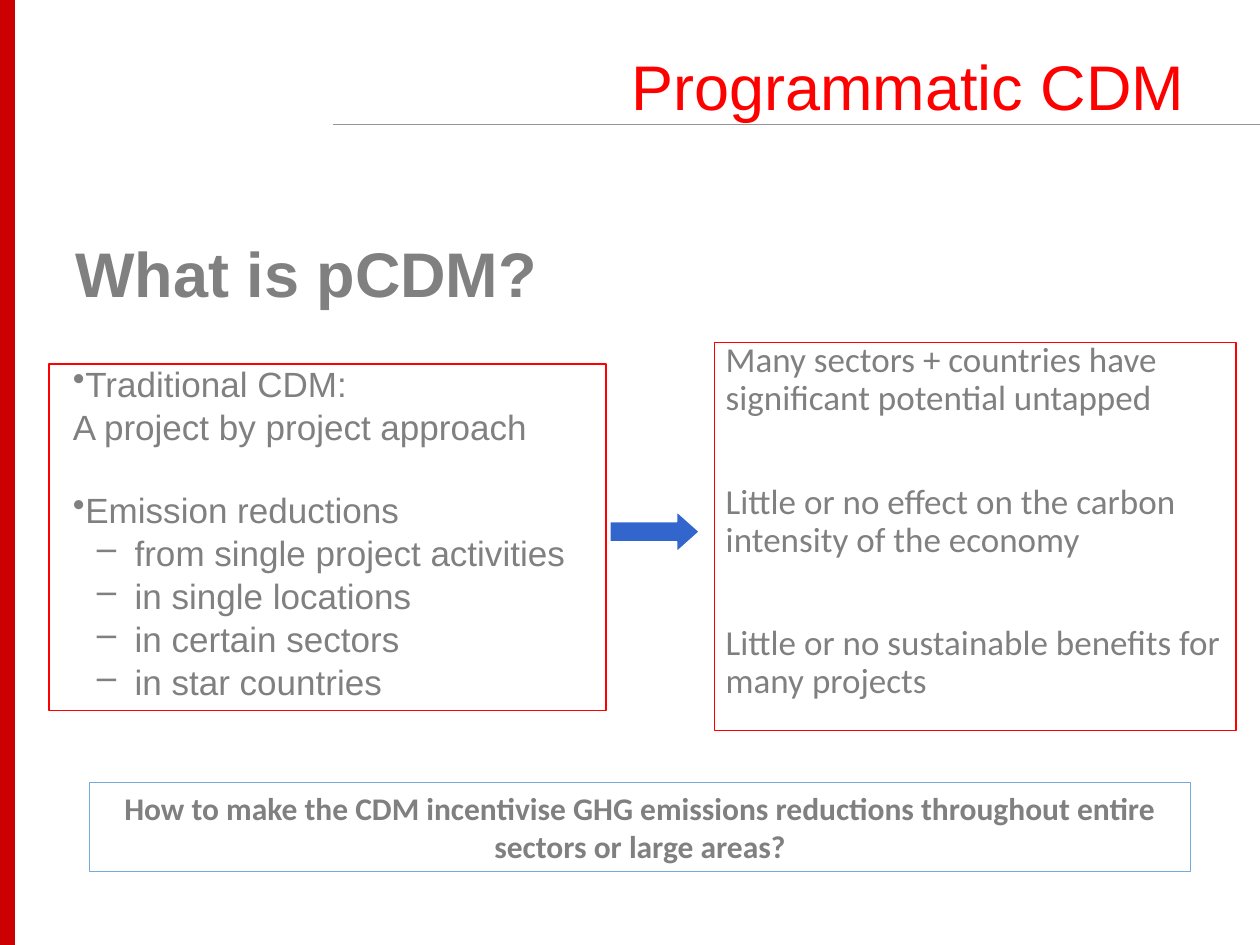
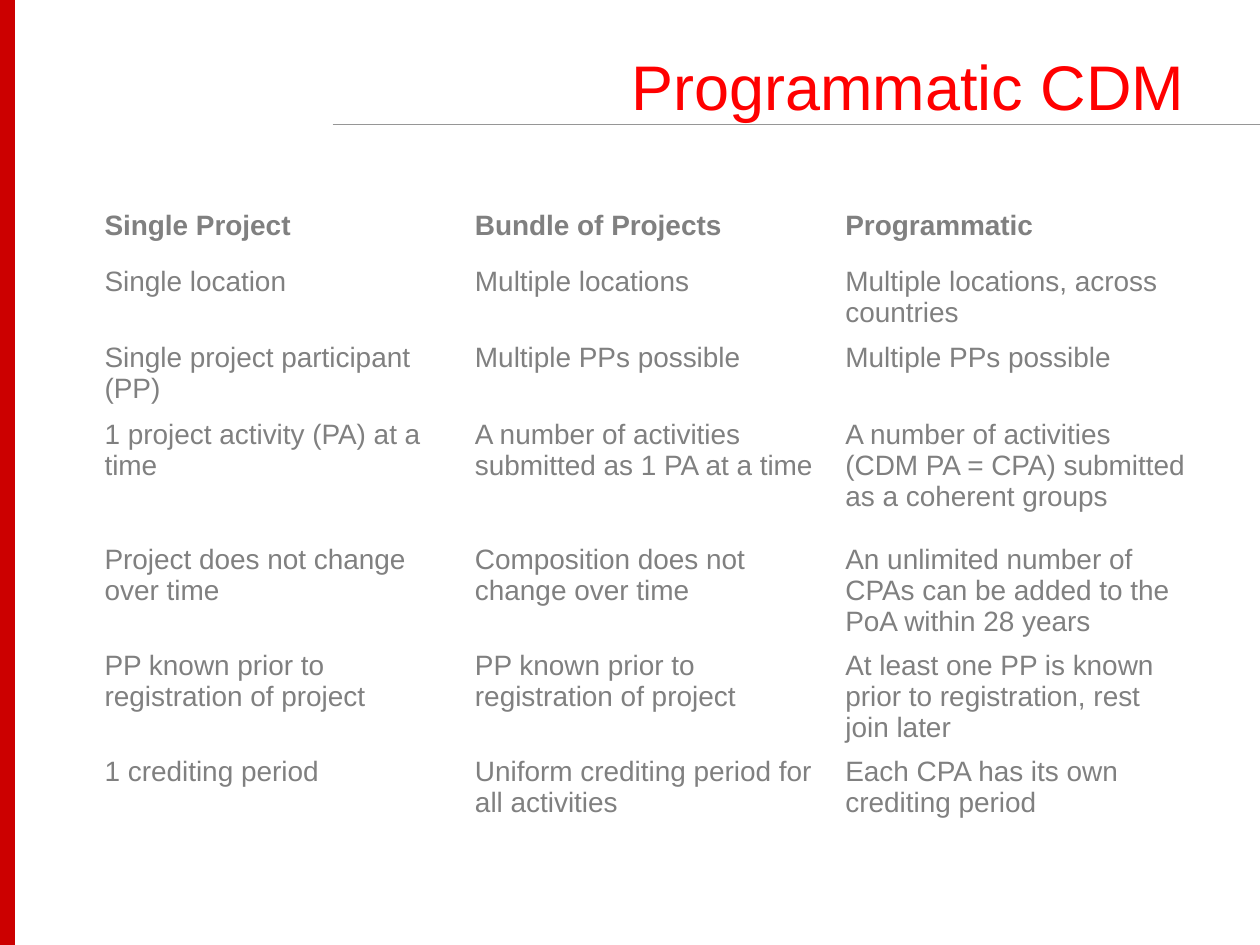
from pptx import Presentation
from pptx.dml.color import RGBColor
from pptx.enum.shapes import MSO_CONNECTOR, MSO_SHAPE
from pptx.enum.text import MSO_ANCHOR, MSO_AUTO_SIZE, PP_ALIGN
from pptx.oxml.ns import qn
from pptx.util import Inches, Pt
from lxml.etree import SubElement

HUES = {
    "red": "FF0000", "band": "CC0000", "text": "808080", "rule": "969696",
    "arrow": "3366CC", "sky": "76AADC", "white": "FFFFFF",
}
TITLE = {"name": "Arial", "size": Pt(36), "bold": False}
HEAD = {"name": "Arial", "size": Pt(36), "bold": True}
LIST = {"name": "Arial", "size": Pt(20)}
NOTE = {"name": "Calibri", "size": Pt(20)}
ASK = {"name": "Calibri", "size": Pt(18), "bold": True}
CELL = {"name": "Arial", "size": Pt(16)}

FRAME = {"word_wrap": True, "auto_size": MSO_AUTO_SIZE.NONE,
         "vertical_anchor": MSO_ANCHOR.TOP}
FLUSH = {"margin_left": 0, "margin_top": 0, "margin_right": 0, "margin_bottom": 0}

POINTS = [
    ("Traditional CDM:", "•", 0),
    ("A project by project approach", None, 5.3),
    ("Emission reductions", "•", 28.5),
    ("from single project activities", "–", 5.3),
    ("in single locations", "–", 5.3),
    ("in certain sectors", "–", 5.3),
    ("in star countries", "–", 5.3),
]
LIMITS = [
    "Many sectors + countries have significant potential untapped",
    "Little or no effect on the carbon intensity of the economy",
    "Little or no sustainable benefits for many projects",
]
ROWS = [
    (0.44, "Single Project", "Bundle of Projects", "Programmatic"),
    (0.61, "Single location", "Multiple locations", "Multiple locations, across countries"),
    (0.61, "Single project participant (PP)", "Multiple PPs possible",
     "Multiple PPs possible"),
    (0.99, "1 project activity (PA) at a time",
     "A number of activities submitted as 1 PA at a time",
     "A number of activities (CDM PA = CPA) submitted as a coherent groups"),
    (0.84, "Project does not change over time", "Composition does not change over time",
     "An unlimited number of CPAs can be added to the PoA within 28 years"),
    (0.84, "PP known prior to registration of project",
     "PP known prior to registration of project",
     "At least one PP is known prior to registration, rest join later"),
    (0.61, "1 crediting period", "Uniform crediting period for all activities",
     "Each CPA has its own crediting period"),
]


def shade(name):
    return RGBColor.from_string(HUES[name])


def apply(thing, looks):
    for key, value in looks.items():
        setattr(thing, key, value)


def place(thing, left, top, width, height):
    apply(thing, {"left": Inches(left), "top": Inches(top),
                  "width": Inches(width), "height": Inches(height)})


def write(para, text, font, hue="text", **looks):
    run = para.add_run()
    run.text = text
    apply(run.font, font)
    run.font.color.rgb = shade(hue)
    apply(para, {"alignment": PP_ALIGN.LEFT, **looks})


def indent(para, left, hang=0, mark=None):
    props = para._p.get_or_add_pPr()
    props.set("marL", str(Inches(left)))
    props.set("indent", str(Inches(hang)))
    if mark:
        SubElement(props, qn("a:buChar")).set("char", mark)


def next_para(frame, index):
    return frame.add_paragraph() if index else frame.paragraphs[0]


def add_box(slide, kind, spot, fill=None, line=None, weight=0.75):
    box = slide.shapes.add_shape(kind, *map(Inches, spot))
    box.shadow.inherit = False
    if fill:
        box.fill.solid()
        box.fill.fore_color.rgb = shade(fill)
    else:
        box.fill.background()
    if line:
        box.line.color.rgb = shade(line)
        box.line.width = Pt(weight)
    else:
        box.line.fill.background()
    apply(box.text_frame, FRAME)
    return box


def add_rule(slide):
    rule = slide.shapes.add_connector(
        MSO_CONNECTOR.STRAIGHT, Inches(2.64), Inches(0.99), Inches(10), Inches(0.99))
    rule.line.color.rgb = shade("rule")
    rule.line.width = Pt(0.75)
    SubElement(rule._element.spPr, qn("a:effectLst"))


def add_page(deck):
    slide = deck.slides.add_slide(deck.slide_layouts[5])
    add_rule(slide)
    add_box(slide, MSO_SHAPE.RECTANGLE, (-0.04, -0.03, 0.16, 7.61), "band")
    title = slide.shapes.title
    place(title, 0.5, 0.33, 9, 1.25)
    apply(title.text_frame, FRAME)
    write(title.text_frame.paragraphs[0], "Programmatic CDM", TITLE, "red",
          alignment=PP_ALIGN.RIGHT)
    return slide


def add_head(slide, text):
    box = slide.shapes.add_textbox(*map(Inches, (0.5, 1.81, 9, 0.87)))
    apply(box.text_frame, FRAME)
    write(box.text_frame.paragraphs[0], text, HEAD)


def add_list(slide):
    frame = add_box(slide, MSO_SHAPE.RECTANGLE, (0.39, 2.89, 4.42, 2.75),
                    line="red", weight=1).text_frame
    for index, (text, mark, gap) in enumerate(POINTS):
        para = next_para(frame, index)
        if mark == "–":
            para.level = 1
            indent(para, 0.58, -0.3, mark)
        else:
            indent(para, 0.09, 0, mark)
        write(para, text, LIST, line_spacing=0.8, space_before=Pt(gap))


def add_notes(slide):
    frame = add_box(slide, MSO_SHAPE.RECTANGLE, (5.67, 2.72, 4.14, 3.08),
                    line="red").text_frame
    apply(frame, FLUSH)
    for index, text in enumerate(LIMITS):
        para = next_para(frame, index)
        indent(para, 0.09)
        write(para, text, NOTE, line_spacing=0.9, space_before=Pt(37.5 if index else 0))


def add_ask(slide, text):
    frame = add_box(slide, MSO_SHAPE.RECTANGLE, (0.71, 6.21, 8.74, 0.71),
                    line="sky").text_frame
    frame.vertical_anchor = MSO_ANCHOR.MIDDLE
    write(frame.paragraphs[0], text, ASK, alignment=PP_ALIGN.CENTER)


def add_edges(cell, outer):
    props = cell._tc.get_or_add_tcPr()
    for side, thick in outer.items():
        edge = SubElement(props, qn(f"a:ln{side}"))
        edge.set("w", str(Pt(2.25 if thick else 1)))
        fill = SubElement(edge, qn("a:solidFill"))
        SubElement(fill, qn("a:srgbClr")).set("val", HUES["white"])


def add_grid(slide):
    high, wide = len(ROWS), len(ROWS[0]) - 1
    total = sum(row[0] for row in ROWS)
    grid = slide.shapes.add_table(
        high, wide, *map(Inches, (0.73, 1.62, 2.94 * wide, total))).table
    grid.horz_banding = False
    for col in grid.columns:
        col.width = Inches(2.94)
    for r, (height, *texts) in enumerate(ROWS):
        grid.rows[r].height = Inches(height)
        for c, text in enumerate(texts):
            cell = grid.cell(r, c)
            add_edges(cell, {"L": c == 0, "R": c == wide - 1,
                             "T": r == 0, "B": r == high - 1})
            cell.fill.background()
            write(cell.text_frame.paragraphs[0], text, {**CELL, "bold": r == 0})


def main():
    deck = Presentation()
    deck.slide_width, deck.slide_height = Inches(10), Inches(7.5)

    intro = add_page(deck)
    add_list(intro)
    add_notes(intro)
    arrow = add_box(intro, MSO_SHAPE.RIGHT_ARROW, (4.84, 4.06, 0.71, 0.32),
                    "arrow", "white")
    arrow.adjustments[1] = 0.56
    add_ask(intro, "How to make the CDM incentivise GHG emissions reductions "
                   "throughout entire sectors or large areas?")
    add_head(intro, "What is pCDM?")

    add_grid(add_page(deck))
    deck.save("out.pptx")


if __name__ == "__main__":
    main()
